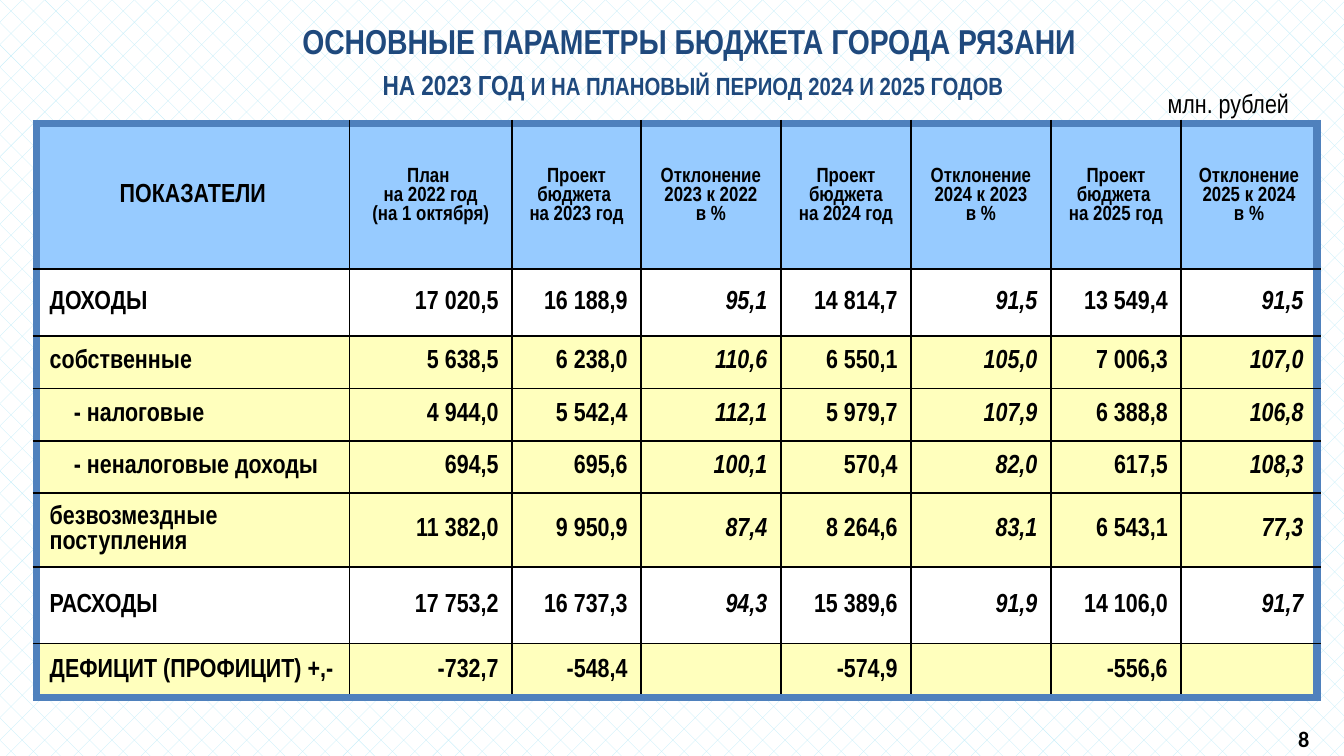
from dataclasses import dataclass

from lxml import etree
from pptx import Presentation
from pptx.dml.color import RGBColor
from pptx.enum.dml import MSO_PATTERN
from pptx.enum.text import MSO_ANCHOR, MSO_AUTO_SIZE, PP_ALIGN
from pptx.oxml.ns import qn
from pptx.util import Inches, Pt

BLACK = RGBColor(0x00, 0x00, 0x00)
WHITE = RGBColor(0xFF, 0xFF, 0xFF)
NAVY = RGBColor(0x1F, 0x49, 0x7D)
FRAME_BLUE = RGBColor(0x4F, 0x81, 0xBD)
HEADER_BLUE = RGBColor(0x97, 0xCB, 0xFF)
CREAM = RGBColor(0xFF, 0xFF, 0xBD)
PATTERN_BLUE = RGBColor(0xBD, 0xEC, 0xF9)

LEFT, CENTER, RIGHT = PP_ALIGN.LEFT, PP_ALIGN.CENTER, PP_ALIGN.RIGHT
TOP, MIDDLE = MSO_ANCHOR.TOP, MSO_ANCHOR.MIDDLE
NO_AUTOFIT = MSO_AUTO_SIZE.NONE
DIAGONAL_BRICK = MSO_PATTERN.DIAGONAL_BRICK

NARROW = "Arial Narrow"
SLIDE_WIDTH = 10
SLIDE_HEIGHT = SLIDE_WIDTH * 9 / 16
TABLE_LEFT, TABLE_TOP = 0.27, 0.92
COLUMN_WIDTHS = (2.33, 1.21, 0.96, 1.04, 0.97, 1.04, 0.97, 1.01)
ROW_HEIGHTS = (1.08, 0.5, 0.39, 0.39, 0.39, 0.55, 0.57, 0.4)
DEVIATION_COLUMNS = (3, 5, 7)
SUBITEM_INDENT = 0.18


@dataclass
class BudgetRow:
    label: str
    values: tuple
    fill: RGBColor = CREAM
    indent: float = 0


@dataclass
class Label:
    text: str
    box: tuple
    font: dict
    anchor: int


HEADERS = (
    "ПОКАЗАТЕЛИ",
    "План \nна 2022 год\n(на 1 октября)",
    "Проект бюджета \nна 2023 год",
    "Отклонение\n2023 к 2022\nв %",
    "Проект бюджета\nна 2024 год",
    "Отклонение\n2024 к 2023\nв %",
    "Проект бюджета \nна 2025 год",
    "Отклонение\n2025 к 2024\nв %",
)

BUDGET_ROWS = (
    BudgetRow("ДОХОДЫ", ("17 020,5", "16 188,9", "95,1", "14 814,7", "91,5", "13 549,4", "91,5"), WHITE),
    BudgetRow("собственные", ("5 638,5", "6 238,0", "110,6", "6 550,1", "105,0", "7 006,3", "107,0")),
    BudgetRow("- налоговые", ("4 944,0", "5 542,4", "112,1", "5 979,7", "107,9", "6 388,8", "106,8"),
              indent=SUBITEM_INDENT),
    BudgetRow("- неналоговые доходы", ("694,5", "695,6", "100,1", "570,4", "82,0", "617,5", "108,3"),
              indent=SUBITEM_INDENT),
    BudgetRow("безвозмездные поступления",
              ("11 382,0", "9 950,9", "87,4", "8 264,6", "83,1", "6 543,1", "77,3")),
    BudgetRow("РАСХОДЫ", ("17 753,2", "16 737,3", "94,3", "15 389,6", "91,9", "14 106,0", "91,7"), WHITE),
    BudgetRow("ДЕФИЦИТ (ПРОФИЦИТ) +,-", ("-732,7", "-548,4", "", "-574,9", "", "-556,6", "")),
)

LABELS = (
    Label("млн. рублей", (8.47, 0.61, 1.34, 0.31), {"name": NARROW, "size": Pt(14)}, MIDDLE),
    Label("8", (9.44, 5.35, 0.52, 0.26), {"name": "Calibri", "size": Pt(11.9), "bold": True}, TOP),
)


def add_run(paragraph, text: str, color: RGBColor, font_format: dict):
    run = paragraph.add_run()
    run.text = text
    run.font.color.rgb = color
    for attribute, value in font_format.items():
        setattr(run.font, attribute, value)
    return run


def add_border(cell, side: str, outer: bool) -> None:
    color, width = (FRAME_BLUE, 4.5) if outer else (BLACK, 1)
    properties = cell._tc.get_or_add_tcPr()
    line = etree.SubElement(properties, qn(f"a:ln{side}"), w=str(Pt(width)))
    fill = etree.SubElement(line, qn("a:solidFill"))
    etree.SubElement(fill, qn("a:srgbClr"), val=str(color))


def fill_cell(cell, text: str, fill: RGBColor, alignment: int, font_format: dict, indent: float = 0) -> None:
    cell.vertical_anchor = MIDDLE
    cell.margin_left = Inches(0.1 + indent)
    cell.margin_right = Inches(0.1)
    cell.margin_top = cell.margin_bottom = Inches(0.04)
    cell.fill.solid()
    cell.fill.fore_color.rgb = fill
    if not text:
        return
    for index, line in enumerate(text.split("\n")):
        frame = cell.text_frame
        paragraph = frame.add_paragraph() if index else frame.paragraphs[0]
        paragraph.alignment = alignment
        add_run(paragraph, line, BLACK, {"name": NARROW, "bold": True, **font_format})


def add_budget_table(slide) -> None:
    row_count, column_count = len(ROW_HEIGHTS), len(COLUMN_WIDTHS)
    table = slide.shapes.add_table(
        row_count, column_count, Inches(TABLE_LEFT), Inches(TABLE_TOP),
        Inches(sum(COLUMN_WIDTHS)), Inches(sum(ROW_HEIGHTS))).table
    table.first_row = table.horz_banding = False
    for column, width in zip(table.columns, COLUMN_WIDTHS):
        column.width = Inches(width)
    for row, height in zip(table.rows, ROW_HEIGHTS):
        row.height = Inches(height)

    # Heavy outer frame, thin inner grid
    for row in range(row_count):
        for column in range(column_count):
            outer_sides = {"L": column == 0, "R": column == column_count - 1,
                           "T": row == 0, "B": row == row_count - 1}
            for side, outer in outer_sides.items():
                add_border(table.cell(row, column), side, outer)

    # Header row
    for column, text in enumerate(HEADERS):
        size = Pt(11 if column else 14)
        fill_cell(table.cell(0, column), text, HEADER_BLUE, CENTER, {"size": size})

    # Budget figures, deviations in italics
    for row, item in enumerate(BUDGET_ROWS, start=1):
        fill_cell(table.cell(row, 0), item.label, item.fill, LEFT, {"size": Pt(14)}, item.indent)
        for column, value in enumerate(item.values, start=1):
            font_format = {"size": Pt(14), "italic": column in DEVIATION_COLUMNS}
            fill_cell(table.cell(row, column), value, item.fill, RIGHT, font_format)


def place_title(slide) -> None:
    title = slide.shapes.title
    title.left, title.top, title.width, title.height = map(Inches, (0.27, 0.14, 9.77, 0.63))
    frame = title.text_frame
    frame.auto_size = NO_AUTOFIT
    frame.vertical_anchor = MIDDLE
    paragraph = frame.paragraphs[0]
    paragraph.alignment = CENTER
    font_format = {"name": NARROW, "size": Pt(18.5), "bold": True}
    add_run(paragraph, "ОСНОВНЫЕ ПАРАМЕТРЫ БЮДЖЕТА ГОРОДА РЯЗАНИ ", NAVY, font_format)
    paragraph.add_line_break()
    for text, size in (("на 2023 год ", 18.5), ("и на плановый период 2024 и 2025 годов", 16.6)):
        run = add_run(paragraph, text, NAVY, {**font_format, "size": Pt(size)})
        run.font._element.set("cap", "small")


def add_label(slide, label: Label) -> None:
    frame = slide.shapes.add_textbox(*map(Inches, label.box)).text_frame
    frame.word_wrap = True
    frame.vertical_anchor = label.anchor
    paragraph = frame.paragraphs[0]
    paragraph.alignment = CENTER
    add_run(paragraph, label.text, BLACK, label.font)


def main() -> None:
    presentation = Presentation()
    presentation.slide_width = Inches(SLIDE_WIDTH)
    presentation.slide_height = Inches(SLIDE_HEIGHT)
    slide = presentation.slides.add_slide(presentation.slide_layouts.get_by_name("Title Only"))

    # Patterned background
    background = slide.background.fill
    background.patterned()
    background.pattern = DIAGONAL_BRICK
    background.fore_color.rgb = PATTERN_BLUE
    background.back_color.rgb = WHITE

    # Table, title and labels
    place_title(slide)
    add_budget_table(slide)
    for label in LABELS:
        add_label(slide, label)
    presentation.save("out.pptx")


if __name__ == "__main__":
    main()
